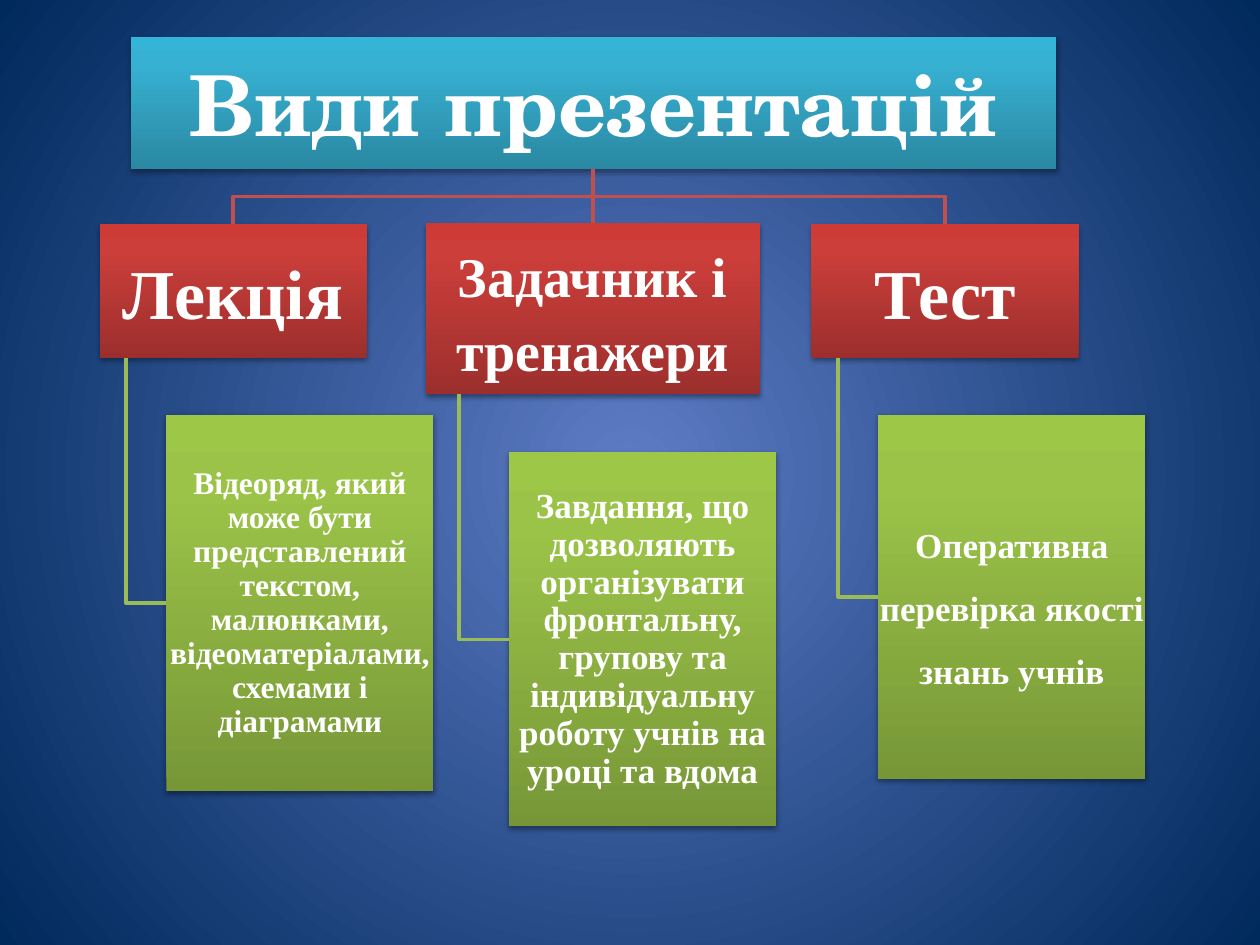
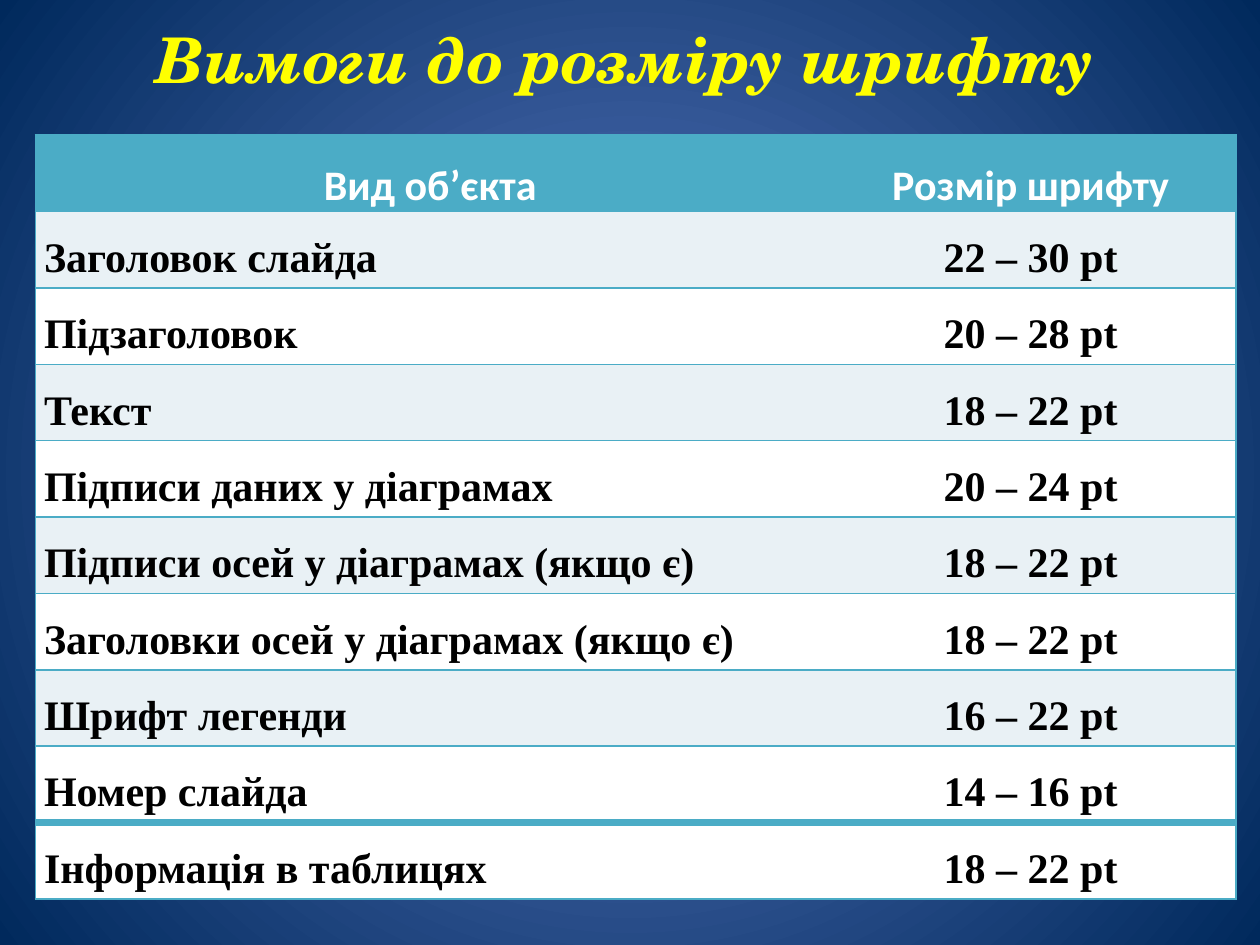
from pptx import Presentation
from pptx.dml.color import RGBColor
from pptx.enum.shapes import MSO_SHAPE as Shape
from pptx.enum.text import MSO_ANCHOR as Anchor, MSO_AUTO_SIZE as AutoSize, PP_ALIGN as Align
from pptx.oxml import parse_xml
from pptx.oxml.ns import nsdecls
from pptx.util import Emu, Inches, Pt

WIDTH, HEIGHT = Inches(10), Inches(7.5)
TITLE_FONT, BODY_FONT, HEAD_FONT = "TeX Gyre Schola", "Times New Roman", "Calibri"
WHITE, BLACK, YELLOW = "FFFFFF", "000000", "FFFF00"
TEAL, BAND = "4BACC6", "E9F1F5"
RED_LINE, GREEN_LINE = "C0504D", "9BBB59"

# Gradients: (position, colour) stops and a direction
UPWARD = '<a:lin ang="16200000" scaled="0"/>'
RADIAL = ('<a:path path="circle"><a:fillToRect l="50000" t="50000" '
          'r="50000" b="50000"/></a:path>')
BACKDROP = [(0, "5E7CC5"), (100, "00295C")]
BLUE_BOX = [(0, "2A88A2"), (80, "37B1D2"), (100, "34B4D6")]
RED_BOX = [(0, "9C2F2D"), (80, "CB3E3A"), (100, "CE3B37")]
GREEN_BOX = [(0, "779737"), (80, "9BC348"), (100, "9DC746")]

TITLE_AREA = (10.4, 3.87, 73.4, 14)
# Each branch: label, area, size, line spacing; detail, area, size, line spacing
BRANCHES = [
    ("Лекція", (7.9, 23.73, 21.2, 14.13), 40, 1,
     "Відеоряд, який може бути представлений текстом, малюнками, "
     "відеоматеріалами, схемами і діаграмами", (13.2, 43.87, 21.2, 39.87), 18, 0.9),
    ("Задачник і тренажери", (33.8, 23.6, 26.5, 18.13), 32, 1.1,
     "Завдання, що дозволяють організувати фронтальну, групову та "
     "індивідуальну роботу учнів на уроці та вдома", (40.4, 47.87, 21.2, 39.6), 20, 0.9),
    ("Тест", (64.4, 23.73, 21.2, 14.13), 40, 1,
     "Оперативна перевірка якості знань учнів", (69.7, 43.87, 21.2, 38.53), 20, 1.5),
]

FONT_SIZES = [
    ("Вид об’єкта", "Розмір шрифту"),
    ("Заголовок слайда", "22 – 30 pt"),
    ("Підзаголовок", "20 – 28 pt"),
    ("Текст", "18 – 22 pt"),
    ("Підписи даних у діаграмах", "20 – 24 pt"),
    ("Підписи осей у діаграмах (якщо є)", "18 – 22 pt"),
    ("Заголовки осей у діаграмах (якщо є)", "18 – 22 pt"),
    ("Шрифт легенди", "16 – 22 pt"),
    ("Номер слайда", "14 – 16 pt"),
    ("Інформація в таблицях", "18 – 22 pt"),
]


def color(hex_code):
    return RGBColor.from_string(hex_code)


def area(left, top, width, height):
    """Turn percentages of the slide into lengths."""
    return [Emu(round(share * side / 100)) for share, side in
            zip((left, top, width, height), (WIDTH, HEIGHT) * 2)]


def move(shape, bounds):
    shape.left, shape.top, shape.width, shape.height = area(*bounds)


def fill_gradient(fill, element, stops, direction):
    fill.gradient()
    old = element.xpath(".//a:gradFill")[0]
    marks = "".join(f'<a:gs pos="{at * 1000}"><a:srgbClr val="{tone}"/></a:gs>'
                    for at, tone in stops)
    new = parse_xml(f'<a:gradFill {nsdecls("a")} rotWithShape="1">'
                    f'<a:gsLst>{marks}</a:gsLst>{direction}</a:gradFill>')
    old.getparent().replace(old, new)


def add_shadow(shape, opacity, distance):
    shape.shadow.inherit = False
    effects = shape.element.xpath("./p:spPr/a:effectLst")[0]
    effects.append(parse_xml(
        f'<a:outerShdw {nsdecls("a")} blurRad="{Pt(3.1)}" dist="{Pt(distance)}" '
        f'dir="5400000" rotWithShape="0"><a:srgbClr val="000000">'
        f'<a:alpha val="{opacity * 1000}"/></a:srgbClr></a:outerShdw>'))


def write(frame, text, font, size, tone, align=Align.CENTER, spacing=1.0, italic=False):
    frame.text = text
    para = frame.paragraphs[0]
    para.alignment, para.line_spacing = align, spacing
    for span in para.runs:
        style = span.font
        style.name, style.size, style.color.rgb = font, Pt(size), color(tone)
        style.bold, style.italic = True, italic


def set_frame(frame, margin, anchor):
    frame.word_wrap, frame.auto_size = True, AutoSize.NONE
    frame.vertical_anchor = anchor
    frame.margin_left = frame.margin_right = Inches(margin)
    frame.margin_top = frame.margin_bottom = Inches(margin)


def style_box(box, stops, opacity=38, distance=1.6):
    fill_gradient(box.fill, box.element, stops, UPWARD)
    box.line.fill.background()
    add_shadow(box, opacity, distance)


def add_box(page, text, bounds, size, spacing, stops, margin):
    box = page.shapes.add_shape(Shape.RECTANGLE, *area(*bounds))
    style_box(box, stops)
    set_frame(box.text_frame, margin, Anchor.MIDDLE)
    write(box.text_frame, text, BODY_FONT, size, WHITE, spacing=spacing)
    return box


def add_path(page, points, tone):
    """Draw an open line through the points."""
    builder = page.shapes.build_freeform(*points[0], scale=1.0)
    builder.add_line_segments(points[1:], close=False)
    path_line = builder.convert_to_shape()
    path_line.fill.background()
    path_line.line.color.rgb, path_line.line.width = color(tone), Pt(2.25)
    path_line.shadow.inherit = False


def link_down(page, parent, child):
    """Join the foot of the parent to the head of the child."""
    start, end = (box.left + box.width // 2 for box in (parent, child))
    foot = parent.top + parent.height
    bend = (foot + child.top) // 2
    add_path(page, [(start, foot), (start, bend), (end, bend), (end, child.top)], RED_LINE)


def link_side(page, label, detail):
    """Join a tenth of the label's foot to the detail's left side."""
    x, foot = label.left + label.width // 10, label.top + label.height
    middle = detail.top + detail.height // 2
    add_path(page, [(x, foot), (x, middle), (detail.left, middle)], GREEN_LINE)


def set_borders(cell, **widths):
    """Set the sides L, R, T, B in points; a side left out has no line."""
    props = cell._tc.get_or_add_tcPr()
    for side in "LRTB":
        width = widths.get(side, 0)
        paint = (f'<a:solidFill><a:srgbClr val="{TEAL}"/></a:solidFill>'
                 if width else "<a:noFill/>")
        props.append(parse_xml(
            f'<a:ln{side} {nsdecls("a")} w="{Pt(width)}">{paint}</a:ln{side}>'))


def add_size_table(page, bounds, shares):
    count = len(FONT_SIZES)
    left, top, width, height = area(*bounds)
    table = page.shapes.add_table(count, 2, left, top, width, height).table
    table.horz_banding = table.first_row = False
    for column, share in zip(table.columns, shares):
        column.width = round(WIDTH * share / 100)
    for r, texts in enumerate(FONT_SIZES):
        table.rows[r].height = height // count
        last, header = r == count - 1, r == 0
        for c, text in enumerate(texts):
            cell = table.cell(r, c)
            set_borders(cell, **{"LR"[c]: 1}, T=4 if last else 1,
                        B=4 if r == count - 2 else 1)
            cell.fill.solid()
            cell.fill.fore_color.rgb = color(TEAL if header else BAND if r % 2 and not last else WHITE)
            cell.margin_left = cell.margin_right = Inches(0.07)
            cell.margin_top = cell.margin_bottom = 0
            write(cell.text_frame, text, HEAD_FONT if header else BODY_FONT, 24,
                  WHITE if header else BLACK,
                  Align.CENTER if header or c else Align.JUSTIFY, 1.5)


def build_kinds(page):
    # Root box
    title = page.shapes.title
    move(title, TITLE_AREA)
    style_box(title, BLUE_BOX, 35, 1.8)
    set_frame(title.text_frame, 0.03, Anchor.MIDDLE)
    write(title.text_frame, "Види презентацій", TITLE_FONT, 48, WHITE)
    # Branches
    for label_text, label_area, label_size, label_gap, text, bounds, size, gap in BRANCHES:
        label = add_box(page, label_text, label_area, label_size, label_gap, RED_BOX, 0.03)
        detail = add_box(page, text, bounds, size, gap, GREEN_BOX, 0.01)
        link_down(page, title, label)
        link_side(page, label, detail)


def build_sizes(page):
    title = page.shapes.title
    move(title, (11.4, 1.47, 80.2, 9.47))
    set_frame(title.text_frame, 0.1, Anchor.TOP)
    title.text_frame.margin_top = title.text_frame.margin_bottom = Inches(0.05)
    write(title.text_frame, "Вимоги до розміру шрифту", TITLE_FONT, 36, YELLOW,
          Align.LEFT, italic=True)
    add_size_table(page, (2.8, 14.27, 95.3, 80.8), (62.7, 32.6))


def main():
    deck = Presentation()
    deck.slide_width, deck.slide_height = WIDTH, HEIGHT
    # Shared backdrop
    master = deck.slide_master
    fill_gradient(master.background.fill, master.element, BACKDROP, RADIAL)
    for build in (build_kinds, build_sizes):
        build(deck.slides.add_slide(deck.slide_layouts[5]))
    deck.save("out.pptx")


if __name__ == "__main__":
    main()
